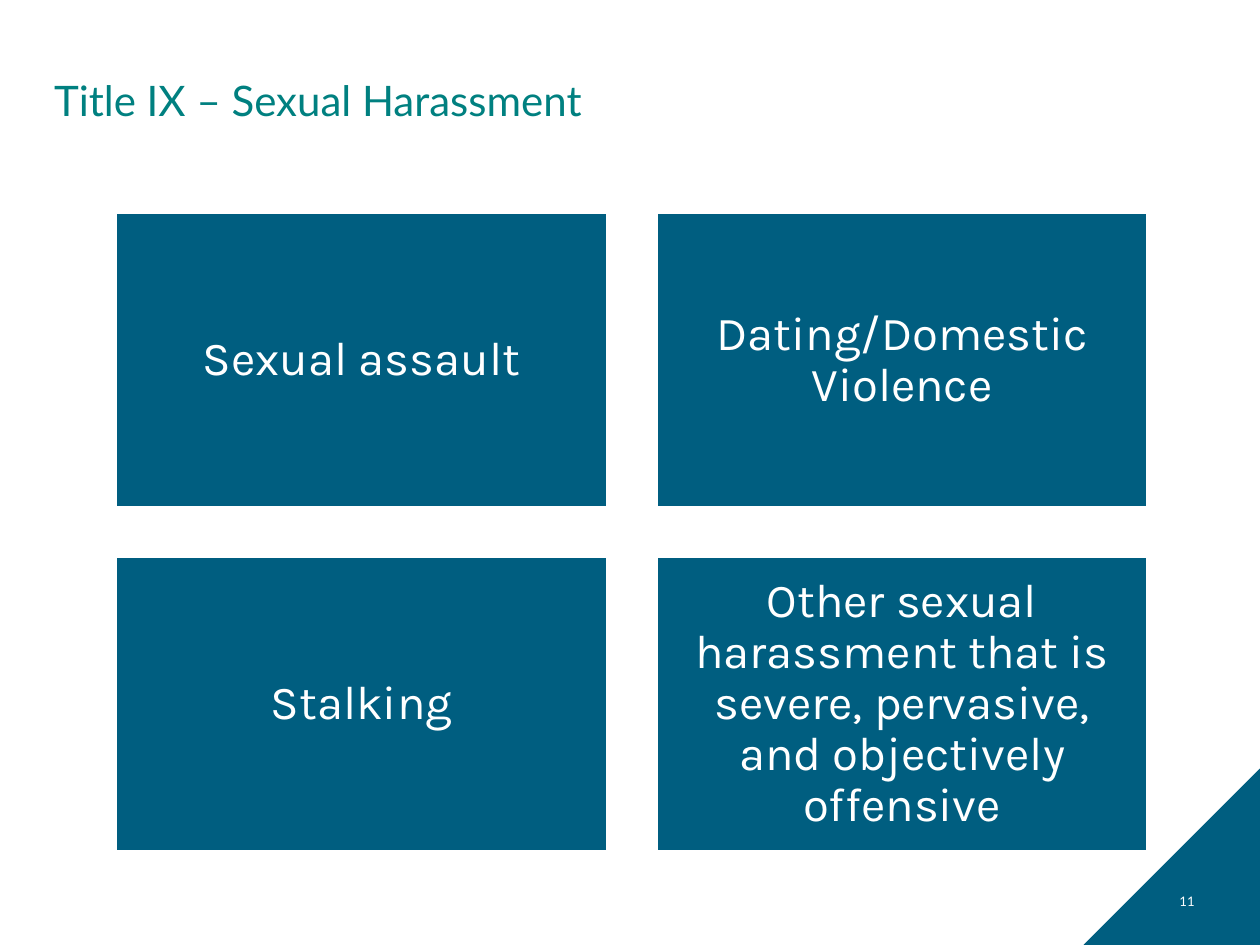
from pptx import Presentation
from pptx import util as u
from pptx.dml.color import RGBColor
from pptx.enum import shapes, text

TITLE = "Title IX – Sexual Harassment"
TOPICS = [
    "Sexual assault",
    "Dating/Domestic Violence",
    "Stalking",
    "Other sexual harassment that is severe, pervasive, and objectively offensive",
]
PAGE = "11"
HUES = {"blue": "005E80", "teal": "008080", "white": "FFFFFF"}

WIDE, HIGH = 10, 7.5
COLS = 2
LEFT, TOP = 0.92, 1.69
CARD_W, CARD_H, GAP = 3.9, 2.34, 0.39
CORNER = 1.4


def hue(name):
    return RGBColor.from_string(HUES[name])


def write(shape, words, size, font, color, align, pads, lines=None):
    frame = shape.text_frame
    frame.word_wrap = True
    frame.vertical_anchor = text.MSO_ANCHOR.MIDDLE
    (frame.margin_left, frame.margin_top,
     frame.margin_right, frame.margin_bottom) = map(u.Inches, pads)
    frame.text = words
    para = frame.paragraphs[0]
    para.alignment = align
    para.line_spacing = lines
    para.font.size = u.Pt(size)
    para.font.name = font
    para.font.color.rgb = hue(color)


def block(slide, kind, *box):
    """Add a plain blue shape without outline or shadow."""
    shape = slide.shapes.add_shape(kind, *map(u.Inches, box))
    shape.shadow.inherit = False
    shape.fill.solid()
    shape.fill.fore_color.rgb = hue("blue")
    shape.line.fill.background()
    return shape


def main():
    deck = Presentation()
    deck.slide_width, deck.slide_height = u.Inches(WIDE), u.Inches(HIGH)
    slide = deck.slides.add_slide(deck.slide_layouts[5])
    align = text.PP_ALIGN

    corner = block(slide, shapes.MSO_SHAPE.RIGHT_TRIANGLE,
                   WIDE - CORNER, HIGH - CORNER, CORNER, CORNER)
    corner._element.spPr.xfrm.set("flipH", "1")

    title = slide.shapes.title
    title.left, title.top = u.Inches(0.43), u.Inches(0.4)
    title.width, title.height = u.Inches(9.16), u.Inches(0.83)
    write(title, TITLE, 24, "Lato", "teal", align.LEFT, (0, 0.05, 0.1, 0.05), 0.9)

    for i, topic in enumerate(TOPICS):
        row, col = divmod(i, COLS)
        card = block(slide, shapes.MSO_SHAPE.RECTANGLE,
                     LEFT + col * (CARD_W + GAP), TOP + row * (CARD_H + GAP),
                     CARD_W, CARD_H)
        card.line.color.rgb = hue("white")
        card.line.width = u.Pt(1.5)
        write(card, topic, 27, "Karla", "white", align.CENTER, [0.11] * 4, 0.9)

    page = slide.shapes.add_textbox(*map(u.Inches, (7.33, 6.95, 2.25, 0.4)))
    write(page, PAGE, 7.5, "Lato", "white", align.RIGHT, (0.1, 0.05, 0.1, 0.05))

    deck.save("out.pptx")


if __name__ == "__main__":
    main()
